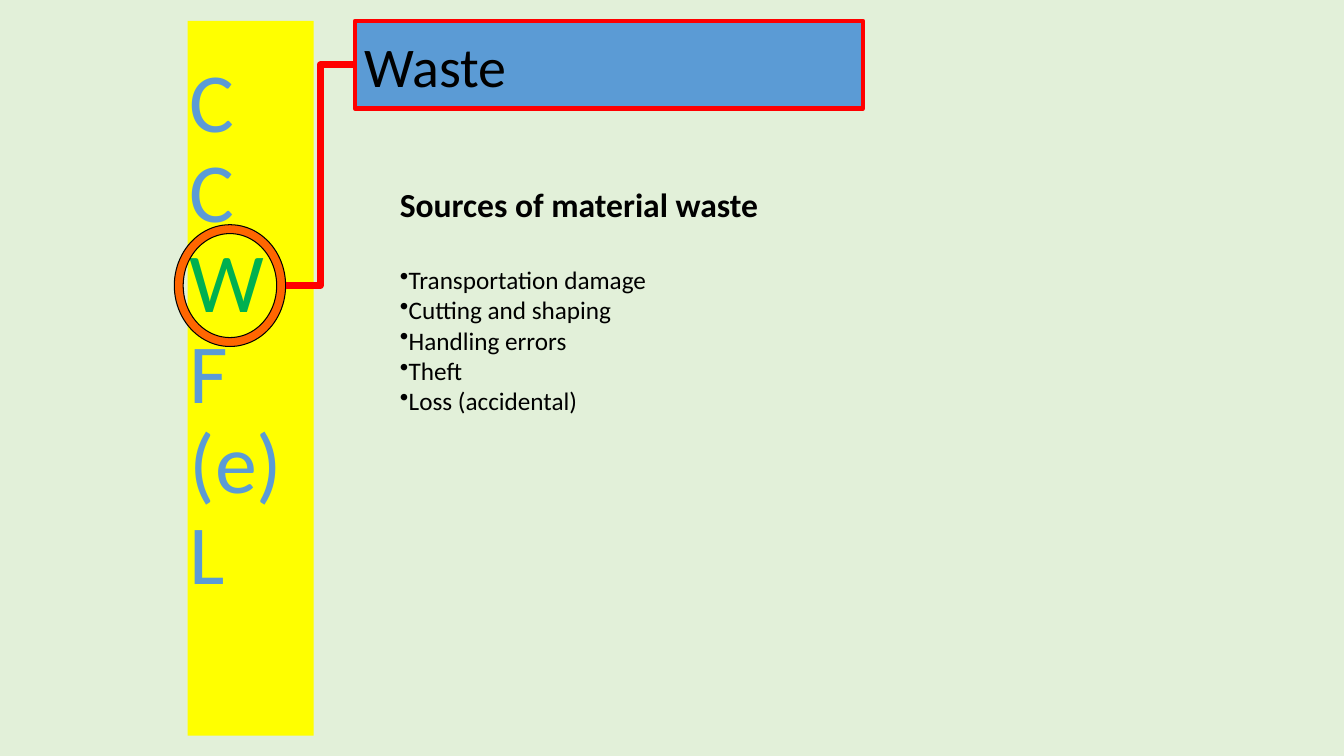
from dataclasses import dataclass
from pptx import Presentation
from pptx.dml.color import RGBColor
from pptx.enum import shapes as sh, text as tx
from pptx.oxml import ns
from pptx.util import Pt
from lxml import etree


@dataclass(frozen=True)
class Theme:
    font: str = "Calibri"
    back: str = "E2F0D9"
    bar: str = "FFFF00"
    blue: str = "5B9BD5"
    green: str = "00B050"
    ring: str = "FF6600"
    red: str = "FF0000"
    ink: str = "000000"
    huge: float = 60
    title: float = 40
    head: float = 24
    body: float = 18


T = Theme()


def rgb(hue):
    return RGBColor.from_string(hue)


def shape(slide, kind, box, fill, line=None, width=0):
    item = slide.shapes.add_shape(kind, *map(Pt, box))
    item.shadow.inherit = False
    item.fill.solid()
    item.fill.fore_color.rgb = rgb(fill)
    if line:
        item.line.color.rgb = rgb(line)
        item.line.width = Pt(width)
    else:
        item.line.fill.background()
    return item


def write(frame, words, size, hue=T.ink, bold=False, lead=None, after=0, bullet=None):
    para = frame.paragraphs[0]
    if para.runs:
        para = frame.add_paragraph()
    para.alignment = tx.PP_ALIGN.LEFT
    para.space_after = Pt(after)
    if lead:
        para.line_spacing = Pt(lead)
    if bullet:
        props = para._p.get_or_add_pPr()
        props.set("marL", "0")
        props.set("indent", "0")
        etree.SubElement(props, ns.qn("a:buChar")).set("char", bullet)
    run = para.add_run()
    run.text = words
    run.font.name = T.font
    run.font.size = Pt(size)
    run.font.bold = bold
    run.font.color.rgb = rgb(hue)


def sidebar(slide, box, marks, chosen):
    frame = shape(slide, sh.MSO_SHAPE.RECTANGLE, box, T.bar).text_frame
    frame.vertical_anchor = tx.MSO_ANCHOR.TOP
    frame.margin_left, frame.margin_right = Pt(1.5), 0
    frame.margin_top = Pt(26.7)
    for mark in marks:
        write(frame, mark, T.huge, T.green if mark == chosen else T.blue, lead=64.6)


def ring(slide, box):
    item = shape(slide, sh.MSO_SHAPE.DONUT, box, T.ring, T.ink, 0.75)
    item.adjustments[0] = 0.08


def banner(slide, box, words):
    frame = shape(slide, sh.MSO_SHAPE.RECTANGLE, box, T.blue, T.red, 3).text_frame
    frame.vertical_anchor = tx.MSO_ANCHOR.MIDDLE
    frame.word_wrap = True
    write(frame, words, T.title)


def link(slide, start, end):
    line = slide.shapes.add_connector(sh.MSO_CONNECTOR.ELBOW, *map(Pt, start + end))
    line.line.color.rgb = rgb(T.red)
    line.line.width = Pt(4.75)
    etree.SubElement(line._element.spPr, ns.qn("a:effectLst"))


def content(slide, box, head, items):
    frame = slide.shapes.add_textbox(*map(Pt, box)).text_frame
    frame.word_wrap = True
    write(frame, head, T.head, bold=True, after=29)
    for item in items:
        write(frame, item, T.body, bullet="•")


def main():
    deck = Presentation()
    deck.slide_width, deck.slide_height = Pt(960), Pt(540)
    slide = deck.slides.add_slide(deck.slide_layouts[6])
    slide.background.fill.solid()
    slide.background.fill.fore_color.rgb = rgb(T.back)

    x, y, w, h = loop = (124.5, 160.5, 79.5, 87)
    left, top, wide, high = title = (253.5, 15, 363, 62.5)
    sidebar(slide, (134, 15, 90, 510.5), ("C", "C", "W", "F", "(e)", "L"), "W")
    ring(slide, loop)
    banner(slide, title, "Waste")
    link(slide, (left, top + high / 2), (x + w, y + h / 2))
    content(slide, (278.5, 127.5, 399, 196.5), "Sources of material waste", (
        "Transportation damage",
        "Cutting and shaping",
        "Handling errors",
        "Theft",
        "Loss (accidental)",
    ))
    deck.save("out.pptx")


if __name__ == "__main__":
    main()
